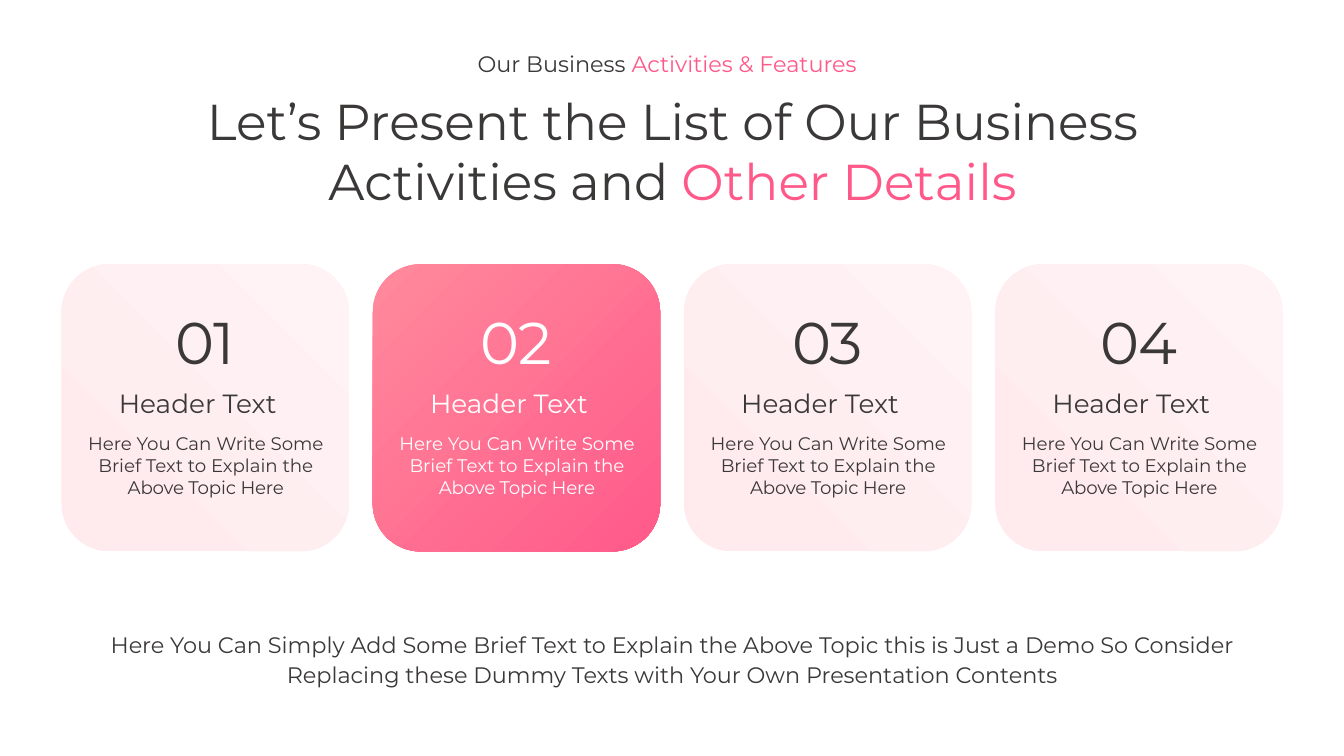
from lxml import etree
from pptx import Presentation
from pptx.dml.color import RGBColor
from pptx.enum.shapes import MSO_SHAPE
from pptx.enum.text import MSO_AUTO_SIZE, PP_ALIGN
from pptx.oxml.ns import qn
from pptx.util import Inches, Pt

ROUNDED = MSO_SHAPE.ROUNDED_RECTANGLE
CENTER = PP_ALIGN.CENTER
LEFT = PP_ALIGN.LEFT
FIT_SHAPE = MSO_AUTO_SIZE.SHAPE_TO_FIT_TEXT

FONT = "Montserrat"
COLORS = {
    "dark": "3B3838",
    "white": "FFFFFF",
    "pink": "FF598A",
    "coral": "FF8A9C",
    "blush": "FFEBEE",
    "pale": "FFF3F5",
}
CARD_LEFT = 0.61
CARD_TOP = 2.62
CARD_SIZE = 2.85
CARD_PITCH = (9.87 - CARD_LEFT) / 3
CARD_NUMBERS = ["01", "02", "03", "04"]
HIGHLIGHTED = "02"
CARD_BODY = [
    "Here You Can Write Some",
    "Brief Text to Explain the",
    "Above Topic Here",
]


def rgb(name):
    return RGBColor.from_string(COLORS[name])


def set_gradient(fill, start, end, angle, start_position=0):
    fill.gradient()
    fill.gradient_angle = angle
    first, last = fill.gradient_stops
    first.color.rgb, last.color.rgb = rgb(start), rgb(end)
    first.position, last.position = start_position, 1


def make_radial(shape):
    gradient = shape._element.spPr.find(qn("a:gradFill"))
    gradient.remove(gradient.find(qn("a:lin")))
    circle = etree.SubElement(gradient, qn("a:path"), path="circle")
    etree.SubElement(circle, qn("a:fillToRect"), l="100000", t="100000")


def add_text(shapes, box, lines, size, color="dark", align=CENTER,
             accent="", line_spacing=None):
    shape = shapes.add_textbox(*map(Inches, box))
    frame = shape.text_frame
    frame.word_wrap = False
    frame.auto_size = FIT_SHAPE
    frame.text = "\n".join(lines)
    if accent:
        frame.paragraphs[-1].add_run().text = accent
    for paragraph in frame.paragraphs:
        paragraph.alignment = align
        if line_spacing:
            paragraph.line_spacing = Pt(line_spacing)
        for run in paragraph.runs:
            run.font.name = FONT
            run.font.size = Pt(size)
            run.font.color.rgb = rgb(color)
    if accent:
        accent_run = frame.paragraphs[-1].runs[-1]
        set_gradient(accent_run.font.fill, "pink", "coral", 180)
    return frame


def tighten_last_line(frame, points):
    run = frame.paragraphs[-1].runs[-1]
    run.font._element.set("spc", str(round(-points * 100)))


def add_card(slide, left, number):
    shapes = slide.shapes.add_group_shape().shapes
    highlighted = number == HIGHLIGHTED
    color = "white" if highlighted else "dark"
    card = shapes.add_shape(ROUNDED, Inches(left), Inches(CARD_TOP),
                            Inches(CARD_SIZE), Inches(CARD_SIZE))
    card.shadow.inherit = False
    card.line.fill.background()
    if highlighted:
        set_gradient(card.fill, "pink", "coral", 0)
        make_radial(card)
    else:
        set_gradient(card.fill, "blush", "pale", 45, 0.1)

    add_text(shapes, (left + 0.47, 3.79, 1.91, 0.42), ["Header Text"],
             18.8, color, LEFT)
    number_frame = add_text(shapes, (left + 0.9, 2.98, 1.05, 0.81),
                            [number], 42, color)
    tighten_last_line(number_frame, 0.4)
    body_frame = add_text(shapes, (left + 0.14, 4.24, 2.58, 0.76),
                          CARD_BODY, 13, color)
    tighten_last_line(body_frame, 0.1)


def main():
    presentation = Presentation()
    presentation.slide_width = Inches(13.33)
    presentation.slide_height = Inches(7.5)
    slide = presentation.slides.add_slide(presentation.slide_layouts[6])

    add_text(slide.shapes, (4.64, 0.45, 4.06, 0.37), ["Our Business "], 16,
             align=LEFT, accent="Activities & Features")
    add_text(slide.shapes, (1.53, 0.84, 10.28, 1.31),
             ["Let’s Present the List of Our Business", "Activities and "],
             36, accent="Other Details")
    for index, number in enumerate(CARD_NUMBERS):
        add_card(slide, CARD_LEFT + index * CARD_PITCH, number)
    add_text(slide.shapes, (0.83, 6.17, 11.68, 0.7),
             ["Here You Can Simply Add Some Brief Text to Explain the Above "
              "Topic this is Just a Demo So Consider",
              "Replacing these Dummy Texts with Your Own Presentation Contents"],
             16, line_spacing=22)

    presentation.save("out.pptx")


if __name__ == "__main__":
    main()
